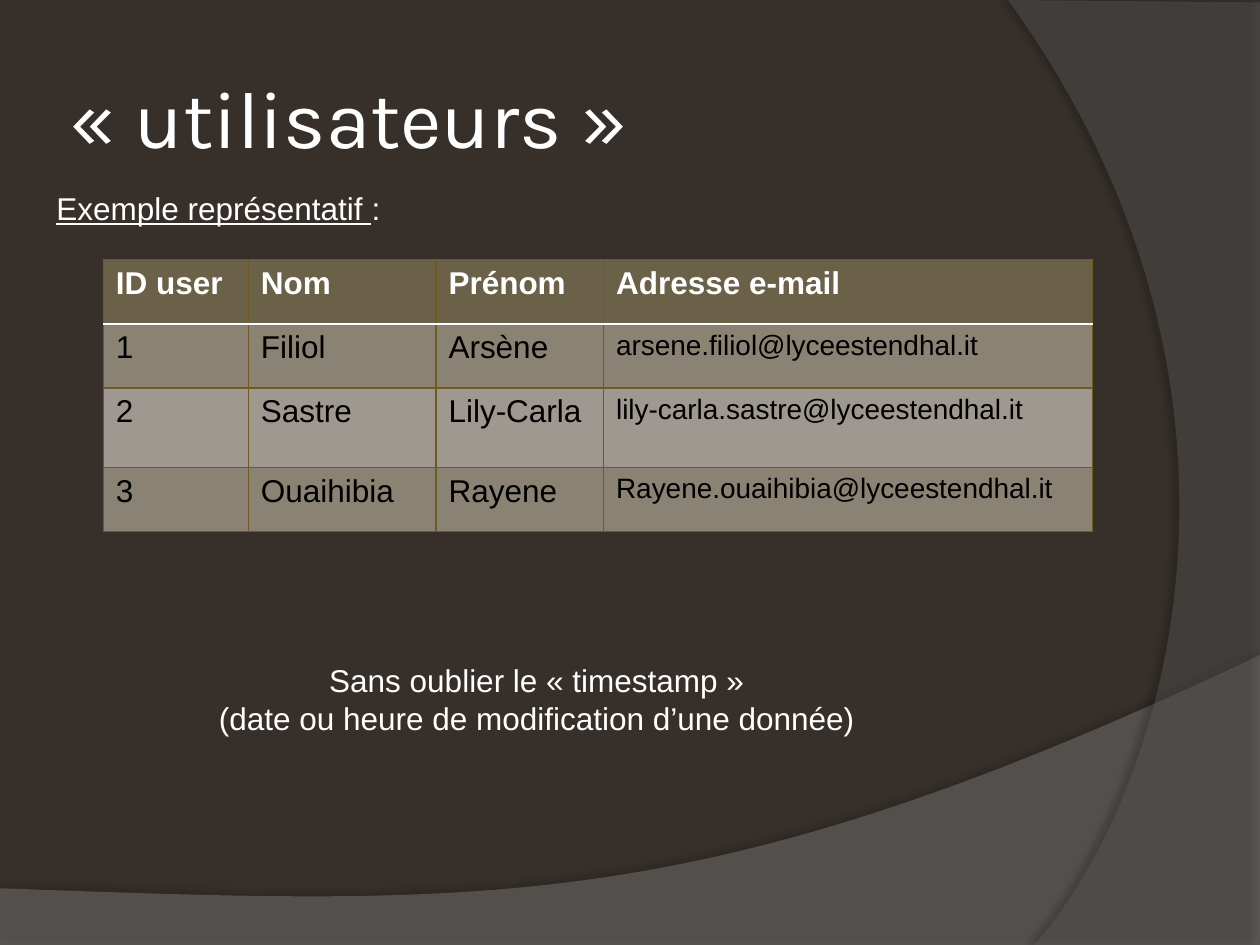
from lxml import etree
from pptx import Presentation
from pptx.dml.color import RGBColor
from pptx.enum.text import MSO_ANCHOR, MSO_AUTO_SIZE, PP_ALIGN
from pptx.oxml.ns import qn
from pptx.util import Inches, Pt

LEFT, CENTER = PP_ALIGN.LEFT, PP_ALIGN.CENTER
MIDDLE = MSO_ANCHOR.MIDDLE
GROW = MSO_AUTO_SIZE.SHAPE_TO_FIT_TEXT

BROWN = RGBColor(0x37, 0x30, 0x2A)
WAVE_GREY = RGBColor(0x7F, 0x7F, 0x7F)
ARC_GREY = RGBColor(0x5E, 0x5E, 0x5E)
WHITE = RGBColor(0xFF, 0xFF, 0xFF)
BLACK = RGBColor(0x00, 0x00, 0x00)
OLIVE = RGBColor(0x6B, 0x61, 0x49)
BAND_DARK = RGBColor(0x8A, 0x82, 0x72)
BAND_LIGHT = RGBColor(0x9E, 0x98, 0x90)
GOLD = RGBColor(0x71, 0x59, 0x1F)

COLUMN_WIDTHS = (1.15, 1.49, 1.33, 3.88)
ROW_HEIGHTS = (0.51, 0.51, 0.63, 0.51)
USERS = (
    ("ID user", "Nom", "Prénom", "Adresse e-mail"),
    ("1", "Filiol", "Arsène", "arsene.filiol@lyceestendhal.it"),
    ("2", "Sastre", "Lily-Carla", "lily-carla.sastre@lyceestendhal.it"),
    ("3", "Ouaihibia", "Rayene", "Rayene.ouaihibia@lyceestendhal.it"),
)


def curve(start, control_1, control_2, end, steps=60):
    """Return the points of a cubic Bezier curve after its start."""
    points = []
    for step in range(1, steps + 1):
        t = step / steps
        weights = ((1 - t) ** 3, 3 * t * (1 - t) ** 2, 3 * t * t * (1 - t), t ** 3)
        corners = (start, control_1, control_2, end)
        points.append(tuple(sum(w * c[axis] for w, c in zip(weights, corners))
                            for axis in (0, 1)))
    return points


def add_color(parent, color, opacity=100):
    """Append a colour with its opacity to an XML element."""
    node = etree.SubElement(parent, qn("a:srgbClr"), val=str(color))
    etree.SubElement(node, qn("a:alpha"), val=str(opacity * 1000))


def add_swoosh(slide, outline, color, opacity, shadow):
    """Draw a translucent background shape with a soft shadow."""
    (left, top), *others = [(Inches(x), Inches(y)) for x, y in outline]
    builder = slide.shapes.build_freeform(left, top)
    builder.add_line_segments(others, close=True)
    swoosh = builder.convert_to_shape()
    swoosh.line.fill.background()
    swoosh.fill.solid()
    swoosh.fill.fore_color.rgb = color
    fill_color = swoosh.fill._xPr.find(qn("a:solidFill"))[0]
    etree.SubElement(fill_color, qn("a:alpha"), val=str(opacity * 1000))
    swoosh.shadow.inherit = False
    strength, blur, distance, angle = shadow
    effects = swoosh._element.spPr.find(qn("a:effectLst"))
    outer = etree.SubElement(effects, qn("a:outerShdw"), blurRad=str(Pt(blur)),
                             dist=str(Pt(distance)), dir=str(angle * 60000),
                             rotWithShape="0")
    add_color(outer, BLACK, strength)


def add_background(slide):
    """Paint the brown ground and the two swooshes."""
    slide.background.fill.solid()
    slide.background.fill.fore_color.rgb = BROWN
    wave = [(0, 7.05), (0, 7.5), (10, 7.5), (10, 5.2)]
    wave += curve(wave[-1], (5.59, 7.29), (3.91, 7.19), wave[0])
    add_swoosh(slide, wave, WAVE_GREY, 45, (35, 4, 3.5, 270))
    arc = [(10, 0.02), (10, 7.5), (8.21, 7.5)]
    arc += curve(arc[-1], (9.35, 6.19), (10.18, 3), (8, 0))
    add_swoosh(slide, arc, ARC_GREY, 40, (45, 4, 4, 180))


def add_run(paragraph, text, size, color=WHITE, font="Arial", bold=False, underline=False):
    """Append one formatted run to a paragraph."""
    run = paragraph.add_run()
    run.text = text
    run.font.size = Pt(size)
    run.font.name = font
    run.font.bold = bold
    run.font.underline = underline
    run.font.color.rgb = color


def add_title(slide, box, text):
    """Place the slide title in its box."""
    frame = slide.shapes.add_textbox(*map(Inches, box)).text_frame
    frame.word_wrap = True
    frame.vertical_anchor = MIDDLE
    frame.margin_left = frame.margin_right = Inches(0.05)
    frame.margin_top = frame.margin_bottom = Inches(0.05)
    add_run(frame.paragraphs[0], text, 46, font="Karla")


def add_caption(slide, box, lines, alignment):
    """Place lines made of (text, underlined) runs in a box."""
    frame = slide.shapes.add_textbox(*map(Inches, box)).text_frame
    frame.word_wrap = False
    frame.auto_size = GROW
    for index, runs in enumerate(lines):
        paragraph = frame.add_paragraph() if index else frame.paragraphs[0]
        paragraph.alignment = alignment
        for text, underlined in runs:
            add_run(paragraph, text, 18, underline=underlined)


def add_borders(cell, row):
    """Frame a cell in gold, with a white rule under the header."""
    white_edge = {0: "B", 1: "T"}.get(row)
    for side in "LRTB":
        color, width = (WHITE, 1.5) if side == white_edge else (GOLD, 0.75)
        line = etree.SubElement(cell._tc.get_or_add_tcPr(), qn(f"a:ln{side}"),
                                w=str(Pt(width)))
        add_color(etree.SubElement(line, qn("a:solidFill")), color)


def add_users_table(slide, left, top):
    """Build the users table from its top left corner."""
    size = (sum(COLUMN_WIDTHS), sum(ROW_HEIGHTS))
    table = slide.shapes.add_table(len(USERS), len(COLUMN_WIDTHS),
                                   *map(Inches, (left, top, *size))).table
    for column, width in zip(table.columns, COLUMN_WIDTHS):
        column.width = Inches(width)
    for row, (user, height) in enumerate(zip(USERS, ROW_HEIGHTS)):
        table.rows[row].height = Inches(height)
        header = row == 0
        band = OLIVE if header else BAND_DARK if row % 2 else BAND_LIGHT
        for column, text in enumerate(user):
            cell = table.cell(row, column)
            add_borders(cell, row)
            cell.fill.solid()
            cell.fill.fore_color.rgb = band
            is_email = column == 3 and not header
            add_run(cell.text_frame.paragraphs[0], text, 16 if is_email else 18,
                    WHITE if header else BLACK, bold=header)


def main():
    """Build and save the users slide."""
    deck = Presentation()
    deck.slide_width, deck.slide_height = Inches(10), Inches(7.5)
    slide = deck.slides.add_slide(deck.slide_layouts[6])
    add_background(slide)
    add_title(slide, (0.5, 0.3, 8.17, 1.25), "« utilisateurs »")
    add_users_table(slide, 0.82, 2.06)
    add_caption(slide, (1.61, 5.2, 5.3, 0.71),
                [[("Sans oublier le « timestamp »", False)],
                 [("(date ou heure de modification d’une donnée)", False)]], CENTER)
    add_caption(slide, (0.35, 1.45, 2.8, 0.4),
                [[("Exemple représentatif ", True), (":", False)]], LEFT)
    deck.save("out.pptx")


if __name__ == "__main__":
    main()
